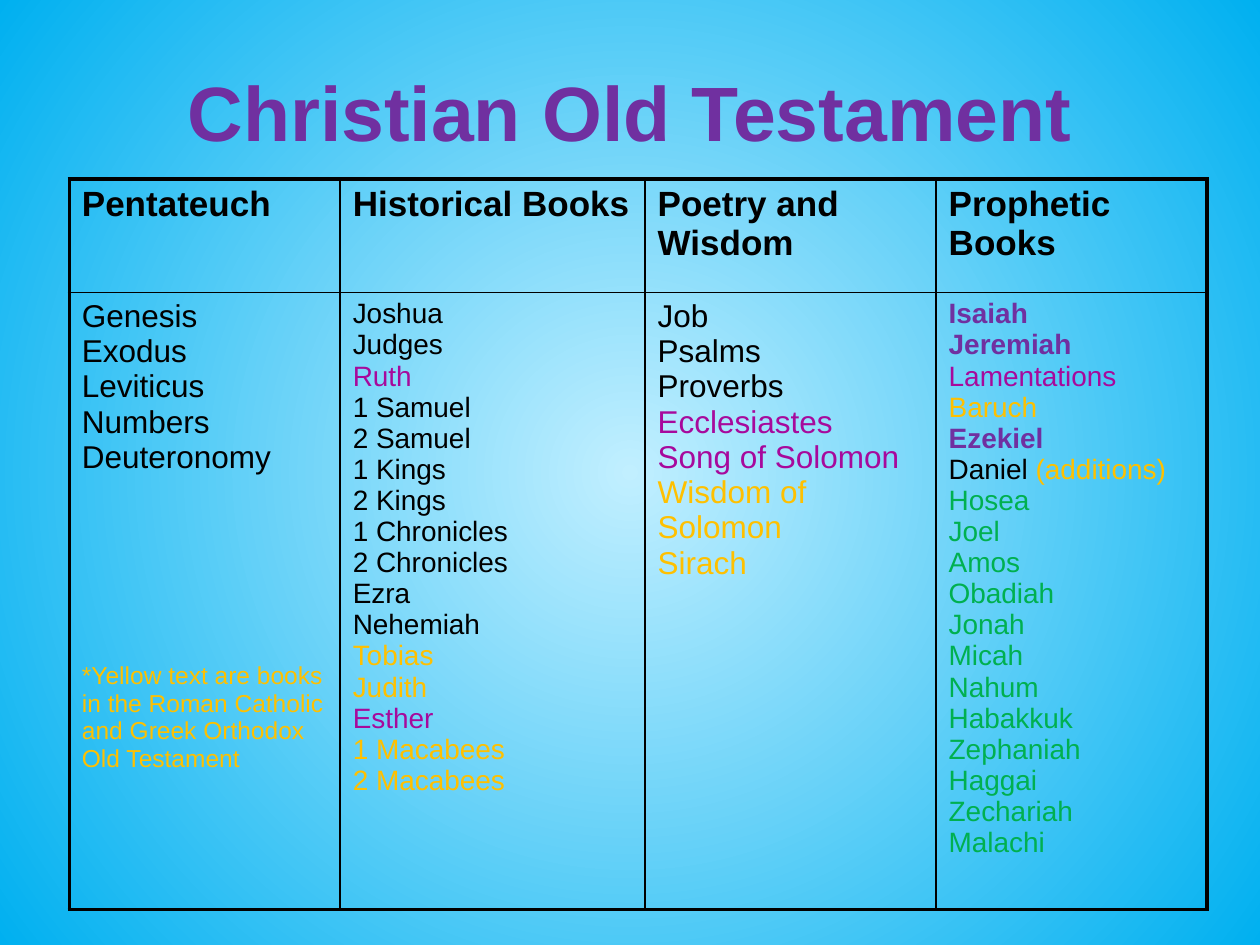
import pptx
import pptx.dml.color
import pptx.enum.text
import pptx.oxml.ns
import pptx.util
from lxml import etree

COLORS = {"black": "000000", "purple": "7030A0", "magenta": "A7099C",
          "yellow": "FFC000", "green": "00B050",
          "center": "C1EFFF", "edge": "00B0F0"}
FONT = "Arial"

# Content: each column has a heading, a text size and groups of (colour, books)
TITLE = "Christian Old Testament"
COLUMNS = [
    ("Pentateuch", 18, [
        ("black", ["Genesis", "Exodus", "Leviticus", "Numbers", "Deuteronomy"])]),
    ("Historical Books", 16, [
        ("black", ["Joshua", "Judges"]),
        ("magenta", ["Ruth"]),
        ("black", ["1 Samuel", "2 Samuel", "1 Kings", "2 Kings", "1 Chronicles",
                   "2 Chronicles", "Ezra", "Nehemiah"]),
        ("yellow", ["Tobias", "Judith"]),
        ("magenta", ["Esther"]),
        ("yellow", ["1 Macabees", "2 Macabees"])]),
    ("Poetry and Wisdom", 18, [
        ("black", ["Job", "Psalms", "Proverbs"]),
        ("magenta", ["Ecclesiastes", "Song of Solomon"]),
        ("yellow", ["Wisdom of", "Solomon", "Sirach"])]),
    ("Prophetic Books", 16, [
        ("purple", ["Isaiah", "Jeremiah"]),
        ("magenta", ["Lamentations"]),
        ("yellow", ["Baruch"]),
        ("purple", ["Ezekiel"]),
        ("black", ["Daniel "]),
        ("green", ["Hosea", "Joel", "Amos", "Obadiah", "Jonah", "Micah", "Nahum",
                   "Habakkuk", "Zephaniah", "Haggai", "Zechariah", "Malachi"])]),
]
ADDITIONS = {"Daniel ": ("(additions)", "yellow")}
NOTE = ("*Yellow text are books in the Roman Catholic "
        "and Greek Orthodox Old Testament")
NOTE_GAP = 107

# Layout in inches
COLUMN_WIDTHS = [2.15, 2.42, 2.31, 2.15]
ROW_HEIGHTS = [0.9, 4.9]
TABLE_LEFT, TABLE_TOP = 0.55, 1.42
OUTER_LINE, INNER_LINE = 2.25, 1


def rgb(name):
    return pptx.dml.color.RGBColor.from_string(COLORS[name])


def style(font, size, color, bold=False):
    font.name = FONT
    font.size = pptx.util.Pt(size)
    font.bold = bold
    font.color.rgb = rgb(color)


def add_run(paragraph, text, size, color, bold=False):
    run = paragraph.add_run()
    run.text = text
    style(run.font, size, color, bold)


def add_line(cell, text, size, color, bold=False):
    frame = cell.text_frame
    paragraph = frame.paragraphs[0]
    if paragraph.runs:
        paragraph = frame.add_paragraph()
    if text in ADDITIONS:
        add_run(paragraph, text, size, color, bold)
        extra, extra_color = ADDITIONS[text]
        add_run(paragraph, extra, size, extra_color)
    else:
        paragraph.add_run().text = text
        style(paragraph.font, size, color, bold)
    return paragraph


def set_borders(cell, widths):
    """Draw black borders; widths are in points: left, right, top, bottom."""
    properties = cell._tc.get_or_add_tcPr()
    for index, (side, width) in enumerate(zip("LRTB", widths)):
        line = etree.Element(pptx.oxml.ns.qn(f"a:ln{side}"),
                             w=str(pptx.util.Pt(width)))
        fill = etree.SubElement(line, pptx.oxml.ns.qn("a:solidFill"))
        etree.SubElement(fill, pptx.oxml.ns.qn("a:srgbClr"), val=COLORS["black"])
        properties.insert(index, line)


def set_background(slide):
    fill = slide.background.fill
    fill.gradient()
    for stop, position, color in zip(fill.gradient_stops, (0, 1), ("center", "edge")):
        stop.position = position
        stop.color.rgb = rgb(color)
    # Turn the linear gradient into a circular one
    linear = next(slide.background._cSld.iter(pptx.oxml.ns.qn("a:lin")))
    circle = etree.Element(pptx.oxml.ns.qn("a:path"), {"path": "circle"})
    etree.SubElement(circle, pptx.oxml.ns.qn("a:fillToRect"),
                     {side: "50000" for side in "ltrb"})
    linear.getparent().replace(linear, circle)


def add_title(slide):
    title = slide.shapes.title
    title.left, title.top = 0, pptx.util.Inches(0.42)
    title.width, title.height = pptx.util.Inches(10), pptx.util.Inches(0.92)
    title.text_frame.text = TITLE
    title.text_frame.vertical_anchor = pptx.enum.text.MSO_ANCHOR.MIDDLE
    paragraph = title.text_frame.paragraphs[0]
    paragraph.alignment = pptx.enum.text.PP_ALIGN.CENTER
    style(paragraph.font, 44, "purple", bold=True)


def add_books_table(slide):
    table = slide.shapes.add_table(
        len(ROW_HEIGHTS), len(COLUMNS),
        pptx.util.Inches(TABLE_LEFT), pptx.util.Inches(TABLE_TOP),
        pptx.util.Inches(sum(COLUMN_WIDTHS)),
        pptx.util.Inches(sum(ROW_HEIGHTS))).table
    table.first_row = table.horz_banding = False
    for row, height in zip(table.rows, ROW_HEIGHTS):
        row.height = pptx.util.Inches(height)
    for column, width in zip(table.columns, COLUMN_WIDTHS):
        column.width = pptx.util.Inches(width)

    # Headings and books
    for index, (heading, size, groups) in enumerate(COLUMNS):
        paragraph = add_line(table.cell(0, index), heading, 20, "black", bold=True)
        paragraph.space_before = pptx.util.Pt(4)
        for color, books in groups:
            for book in books:
                add_line(table.cell(1, index), book, size, color, color == "purple")
    note = add_line(table.cell(1, 0), NOTE, 14, "yellow")
    note.space_before = pptx.util.Pt(NOTE_GAP)

    # Clear cells with a heavier outer frame
    last_row, last_column = len(ROW_HEIGHTS) - 1, len(COLUMNS) - 1
    for row in range(last_row + 1):
        for column in range(last_column + 1):
            cell = table.cell(row, column)
            cell.fill.background()
            on_frame = (column == 0, column == last_column, row == 0, row == last_row)
            set_borders(cell, [OUTER_LINE if outer else INNER_LINE
                               for outer in on_frame])


def main():
    presentation = pptx.Presentation()
    presentation.slide_width = pptx.util.Inches(10)
    presentation.slide_height = pptx.util.Inches(7.5)
    slide = presentation.slides.add_slide(presentation.slide_layouts[5])
    set_background(slide)
    add_title(slide)
    add_books_table(slide)
    presentation.save("out.pptx")


if __name__ == "__main__":
    main()
